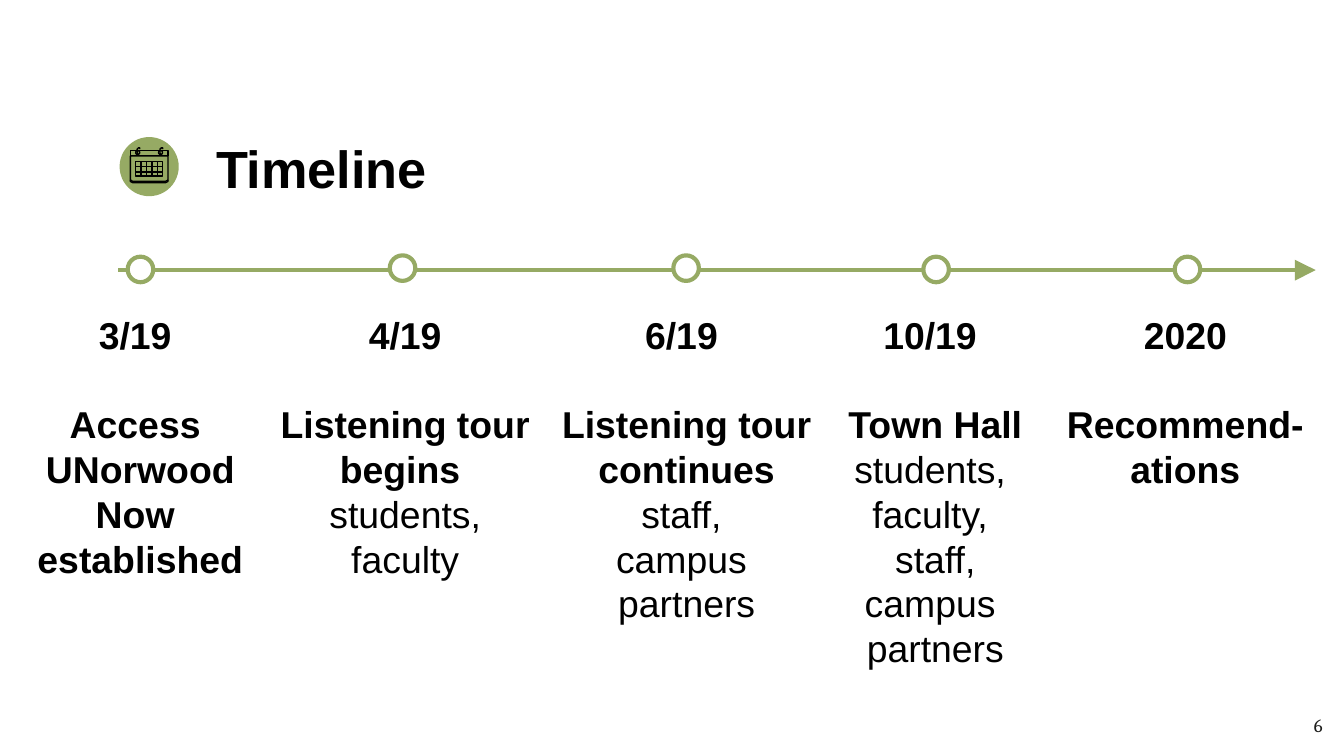
from pptx import Presentation
from pptx.dml.color import RGBColor
from pptx.enum.shapes import MSO_CONNECTOR as Conn, MSO_SHAPE as Shape
from pptx.enum.text import MSO_ANCHOR as Anchor, PP_ALIGN as Align
from pptx.oxml.ns import qn
from pptx.util import Inches, Pt
from lxml.etree import SubElement

HUES = {"green": "96AA64", "white": "FFFFFF", "black": "000000", "ink": "1D1D1B"}

# Left, width and height of the column, date, then (words, bold) per paragraph
STEPS = [
    (0.01, 2.07, 2.12, "3/19 ",
     [("Access ", True), ("UNorwood Now ", True), ("established", True)]),
    (1.94, 2.15, 2.12, "4/19",
     [("Listening tour begins ", True), ("students, faculty", False)]),
    (3.81, 2.6, 2.46, "6/19 ",
     [("Listening tour continues", True), ("staff, ", False),
      ("campus \npartners", False)]),
    (5.66, 2.6, 2.79, "10/19 ",
     [("Town Hall", True), ("students, ", False), ("faculty, ", False),
      ("staff,", False), ("campus \npartners", False)]),
    (7.82, 2, 1.78, "2020", [("Recommend-ations", True)]),
]
DOTS = [(0.95, 1.91), (2.9, 1.9), (5.01, 1.9), (6.87, 1.91), (8.74, 1.91)]


def tint(name):
    return RGBColor.from_string(HUES[name])


def style(shape, fill=None, line=None, width=0.75):
    shape.shadow.inherit = False
    if fill:
        shape.fill.solid()
        shape.fill.fore_color.rgb = tint(fill)
    else:
        shape.fill.background()
    if line:
        shape.line.color.rgb = tint(line)
        shape.line.width = Pt(width)
    else:
        shape.line.fill.background()


def add_text(slide, box, paras, size=20, font="Arial", hue="black",
             align=Align.CENTER, anchor=Anchor.TOP, pad=(0.1, 0.05),
             gap=0, lead=1.0):
    """Add (words, bold) paragraphs; gap is the space in points after the first."""
    frame = slide.shapes.add_textbox(*map(Inches, box)).text_frame
    frame.word_wrap = True
    frame.vertical_anchor = anchor
    frame.margin_left = frame.margin_right = Inches(pad[0])
    frame.margin_top = frame.margin_bottom = Inches(pad[1])
    for i, (words, bold) in enumerate(paras):
        para = frame.add_paragraph() if i else frame.paragraphs[0]
        para.text = words
        para.alignment = align
        para.line_spacing = lead
        para.space_after = Pt(0 if i else gap)
        for run in para.runs:
            run.font.name = font
            run.font.size = Pt(size)
            run.font.bold = bold
            run.font.color.rgb = tint(hue)


def add_oval(slide, left, top, side, **look):
    oval = slide.shapes.add_shape(
        Shape.OVAL, *map(Inches, (left, top, side, side)))
    style(oval, **look)


def add_line(slide, start, end, hue="black", width=0.75, arrow=False):
    line = slide.shapes.add_connector(Conn.STRAIGHT, *map(Inches, start + end))
    line.line.color.rgb = tint(hue)
    line.line.width = Pt(width)
    if arrow:
        SubElement(line.line._get_or_add_ln(), qn("a:tailEnd"),
                   type="triangle", w="lg", len="lg")
    SubElement(line._element.spPr, qn("a:effectLst"))


def add_path(slide, points, close=False):
    spots = [(Inches(x), Inches(y)) for x, y in points]
    pen = slide.shapes.build_freeform(*spots[0])
    pen.add_line_segments(spots[1:], close=close)
    style(pen.convert_to_shape(), line="black")


def add_icon(slide):
    """Draw the calendar on its round badge."""
    add_oval(slide, 0.89, 1.02, 0.44, fill="green")
    add_path(slide, [(1.25, 1.16), (1.25, 1.12), (0.97, 1.12), (0.97, 1.16)])
    for base, foot in ((1.16, 1.35), (1.34, 1.36)):
        rim = [(0.97, base), (0.97, foot - 0.01), (0.99, foot),
               (1.23, foot), (1.25, foot - 0.01), (1.25, base)]
        add_path(slide, rim, close=base == 1.16)
    for left in (1.01, 1.18):
        add_oval(slide, left, 1.12, 0.03, line="black")
        hook = [(0.02, 1.15), (0.01, 1.14), (0.01, 1.11),
                (0.02, 1.1), (0.03, 1.1), (0.03, 1.11)]
        add_path(slide, [(left + x, y) for x, y in hook])
    add_path(slide, [(1.01, 1.2), (1.21, 1.2), (1.21, 1.31), (1.01, 1.31)],
             close=True)
    for y in (1.24, 1.28):
        add_line(slide, (1.01, y), (1.21, y))
    for i in range(1, 5):
        x = 1.01 + 0.04 * i
        add_line(slide, (x, 1.2), (x, 1.31))


def main():
    deck = Presentation()
    deck.slide_width = Inches(10)
    deck.slide_height = deck.slide_width * 9 // 16
    slide = deck.slides.add_slide(deck.slide_layouts[6])

    add_icon(slide)
    add_text(slide, (1.51, 1.01, 4.24, 0.48), [("Timeline", True)], size=28,
             align=Align.LEFT, anchor=Anchor.MIDDLE, pad=(0.1, 0.1))
    add_text(slide, (9.34, 5.19, 0.6, 0.43), [("6", False)], size=10,
             font="Cambria", hue="ink", align=Align.RIGHT, pad=(0.1, 0.1),
             lead=1.15)

    add_line(slide, (0.88, 2.01), (9.79, 2.01), "green", 2.25, arrow=True)
    for left, top in DOTS:
        add_oval(slide, left, top, 0.19, fill="white", line="green", width=2.25)
    for left, width, height, date, notes in STEPS:
        add_text(slide, (left, 2.27, width, height), [(date, True)] + notes,
                 gap=24)

    deck.save("out.pptx")


if __name__ == "__main__":
    main()
